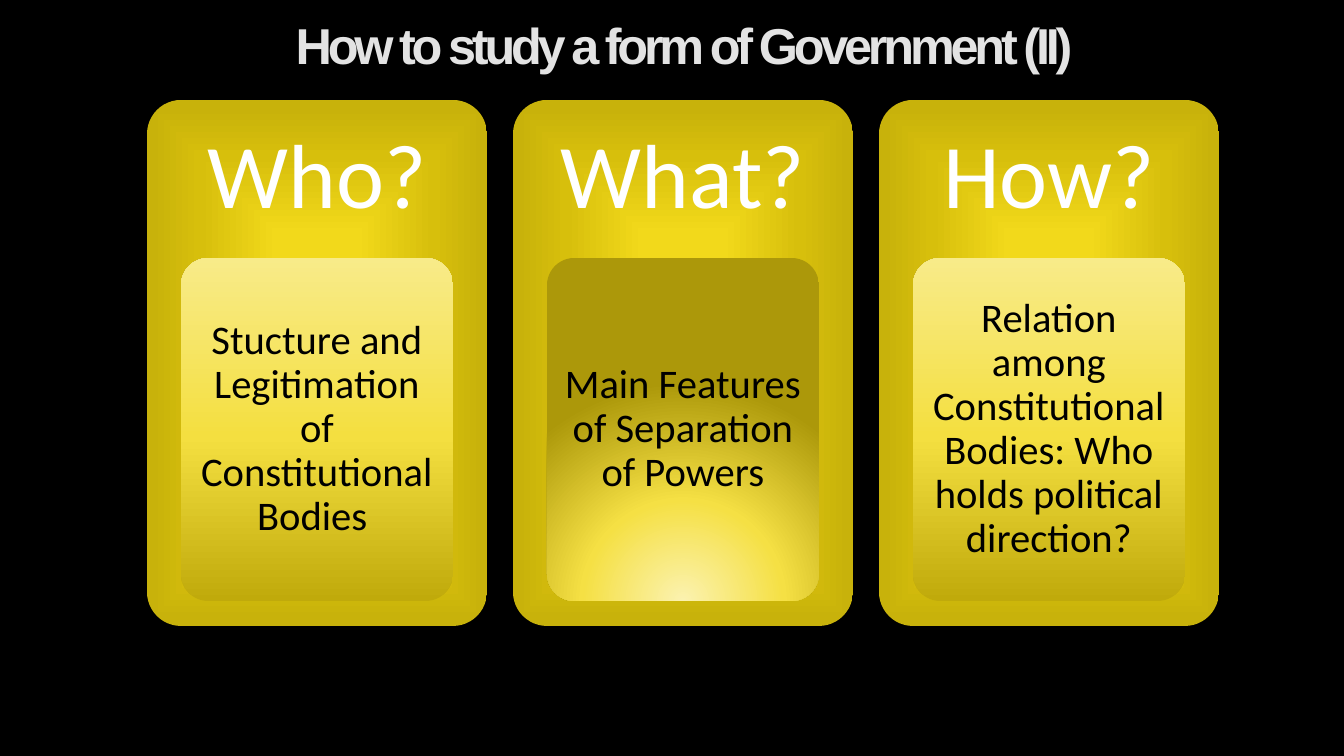
from pptx import Presentation
from pptx.dml.color import RGBColor
from pptx.enum.shapes import MSO_SHAPE
from pptx.enum.text import MSO_ANCHOR, MSO_AUTO_SIZE, PP_ALIGN
from pptx.oxml import parse_xml
from pptx.oxml.ns import nsdecls, qn
from pptx.util import Emu, Pt

PX = 914400 / 100.8
BLACK = RGBColor(0, 0, 0)
WHITE = RGBColor(255, 255, 255)
SILVER = RGBColor(0xE3, 0xE3, 0xE3)

LINEAR_UP = '<a:lin ang="16200000" scaled="0"/>'
FROM_CENTRE = ('<a:path path="shape"><a:fillToRect l="50000" t="50000" '
               'r="50000" b="50000"/></a:path>')
FROM_BELOW = ('<a:path path="circle"><a:fillToRect l="50000" t="130000" '
              'r="50000" b="-30000"/></a:path>')

CARD_FILL = ([(0, "F2D91B"), (23, "F2D91B"), (69, "D7BF0C"), (97, "C8B20B")],
             FROM_CENTRE)
PANEL_FILL = ([(0, "C0AA0B"), (48, "F4DF40"), (100, "F8EB89")], LINEAR_UP)
GLOW_FILL = ([(0, "FBF2B0"), (46, "F5E044"), (100, "AC980A")], FROM_BELOW)

QUESTIONS = [
    ("Who?", "Stucture and Legitimation of Constitutional Bodies ", PANEL_FILL),
    ("What?", "Main Features of Separation of Powers", GLOW_FILL),
    ("How?", "Relation among Constitutional Bodies: "
             "Who holds political direction?", PANEL_FILL),
]


def px(length):
    return Emu(round(length * PX))


def set_attributes(target, values):
    for name, value in values.items():
        setattr(target, name, value)


def write_text(shape, text, font, margins, anchor, wrap=True):
    """Fill a shape with one centred paragraph; margins are left, top, right, bottom."""
    frame = shape.text_frame
    sides = ("margin_left", "margin_top", "margin_right", "margin_bottom")
    set_attributes(frame, {"word_wrap": wrap, "vertical_anchor": anchor,
                           "auto_size": MSO_AUTO_SIZE.NONE,
                           **dict(zip(sides, map(px, margins)))})
    paragraph = frame.paragraphs[0]
    set_attributes(paragraph, {"alignment": PP_ALIGN.CENTER, "line_spacing": 0.9})
    run = paragraph.add_run()
    run.text = text
    color = font["color"]
    set_attributes(run.font, {k: v for k, v in font.items() if k != "color"})
    run.font.color.rgb = color
    return run


def add_rounded_box(slide, box, gradient):
    shape = slide.shapes.add_shape(MSO_SHAPE.ROUNDED_RECTANGLE, *map(px, box))
    shape.adjustments[0] = 0.1
    shape.shadow.inherit = False
    shape.line.fill.background()
    stops, direction = gradient
    stop_xml = "".join(
        f'<a:gs pos="{position * 1000}"><a:srgbClr val="{color}"/></a:gs>'
        for position, color in stops)
    fill = parse_xml(f'<a:gradFill {nsdecls("a")} rotWithShape="1">'
                     f'<a:gsLst>{stop_xml}</a:gsLst>{direction}</a:gradFill>')
    shape.element.spPr.find(qn("a:prstGeom")).addnext(fill)
    return shape


def add_title(slide, box, text):
    title = slide.shapes.title
    sides = ("left", "top", "width", "height")
    set_attributes(title, dict(zip(sides, map(px, box))))
    font = {"name": "Arial", "size": Pt(36), "bold": True, "color": SILVER}
    run = write_text(title, text, font, (10, 5, 10, 5), MSO_ANCHOR.TOP, wrap=False)
    run.font._element.set("spc", "-300")


def add_question_card(slide, box, question, answer, panel_fill):
    left, top, width, height = box
    header, side, foot = 158, 34, 25
    card = add_rounded_box(slide, box, CARD_FILL)
    write_text(card, question, {"name": "Calibri", "size": Pt(65), "color": WHITE},
               (17, 17, 17, height - header + 17), MSO_ANCHOR.MIDDLE)
    panel_box = (left + side, top + header,
                 width - 2 * side, height - header - foot)
    panel = add_rounded_box(slide, panel_box, panel_fill)
    write_text(panel, answer, {"name": "Calibri", "size": Pt(29), "color": BLACK},
               (8, 6, 8, 6), MSO_ANCHOR.MIDDLE)


def main():
    deck = Presentation()
    deck.slide_width, deck.slide_height = px(1344), px(756)
    slide = deck.slides.add_slide(deck.slide_layouts[5])
    slide.background.fill.solid()
    slide.background.fill.fore_color.rgb = BLACK
    add_title(slide, (180, 16, 1008, 89), "How to study a form of Government (II)")
    width, gap = 340, 26
    for column, content in enumerate(QUESTIONS):
        box = (147 + column * (width + gap), 100, width, 526)
        add_question_card(slide, box, *content)
    deck.save("out.pptx")


if __name__ == "__main__":
    main()
